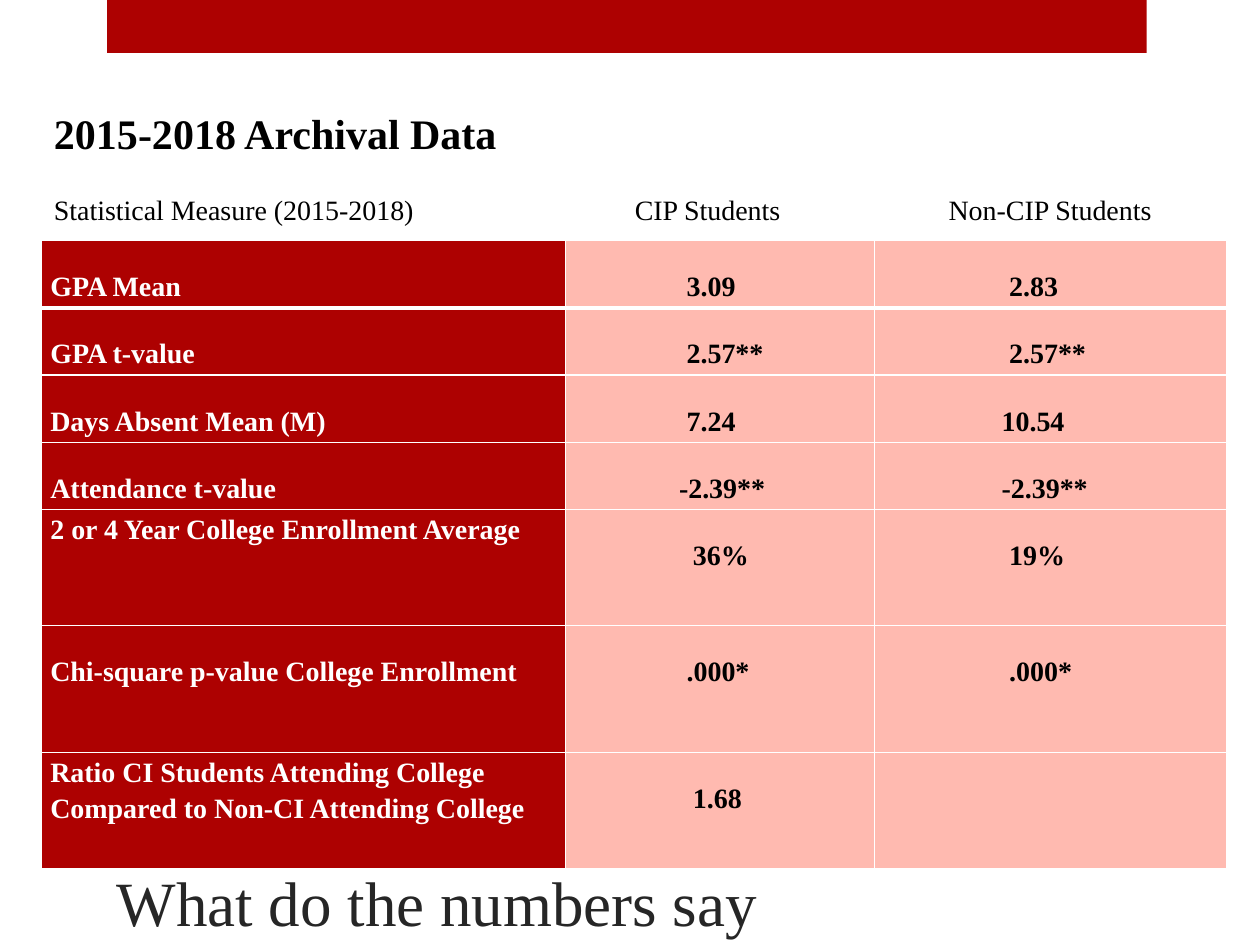
from lxml.etree import SubElement
from pptx import Presentation
from pptx.dml.color import RGBColor
from pptx.enum.shapes import MSO_SHAPE
from pptx.enum.text import MSO_ANCHOR
from pptx.oxml.ns import qn
from pptx.util import Inches, Pt

RED = RGBColor(0xAD, 0x01, 0x01)
PINK = RGBColor(0xFF, 0xBA, 0xB0)
WHITE = RGBColor(0xFF, 0xFF, 0xFF)
BLACK = RGBColor(0x00, 0x00, 0x00)
CHARCOAL = RGBColor(0x26, 0x26, 0x26)

COLUMN_WIDTHS = [4.16, 2.45, 2.8]
ROW_HEIGHTS = [0.52] * 4 + [0.92, 1.01, 0.92]
# Label, label line spacing, then a (value, indent) pair for each group
MEASURES = [
    ("GPA Mean", 2, ("3.09", 0.89), ("2.83", 1)),
    ("GPA t-value", 2, ("2.57**", 0.89), ("2.57**", 1)),
    ("Days Absent Mean (M)", 2, ("7.24", 0.89), ("10.54", 0.94)),
    ("Attendance t-value", 2, ("-2.39**", 0.83), ("-2.39**", 0.94)),
    ("2 or 4 Year College Enrollment Average", 1.15, ("36%", 0.94), ("19%", 1)),
    ("Chi-square p-value College Enrollment", 2, (".000*", 0.89), (".000*", 1)),
    ("Ratio CI Students Attending College Compared to Non-CI Attending College",
     1.15, ("1.68", 0.94), ("", 0)),
]


class SlideBuilder:
    font_name = "Times New Roman"

    def __init__(self, slide):
        self.slide = slide

    def style(self, paragraph, size, color, bold=False):
        font = paragraph.font
        font.name, font.size, font.bold = self.font_name, Pt(size), bold
        font.color.rgb = color

    def bar(self, left, top, width, height, color):
        shape = self.slide.shapes.add_shape(
            MSO_SHAPE.RECTANGLE, Inches(left), Inches(top), Inches(width), Inches(height))
        shape.shadow.inherit = False
        shape.fill.solid()
        shape.fill.fore_color.rgb = color
        shape.line.fill.background()

    def text(self, left, top, width, height, text, size, color=BLACK, bold=False,
             anchor=MSO_ANCHOR.MIDDLE, tab_stops=()):
        box = self.slide.shapes.add_textbox(
            Inches(left), Inches(top), Inches(width), Inches(height))
        frame = box.text_frame
        frame.word_wrap = True
        frame.vertical_anchor = anchor
        paragraph = frame.paragraphs[0]
        paragraph.text = text
        if tab_stops:
            tab_list = SubElement(paragraph._p.get_or_add_pPr(), qn("a:tabLst"))
            for position in tab_stops:
                SubElement(tab_list, qn("a:tab"), pos=str(Inches(position)), algn="l")
        self.style(paragraph, size, color, bold)

    def borders(self, cell, bottom_width):
        properties = cell._tc.get_or_add_tcPr()
        for side, width in (("L", 1), ("R", 1), ("T", 1), ("B", bottom_width)):
            line = SubElement(properties, qn(f"a:ln{side}"), w=str(Pt(width)))
            fill = SubElement(line, qn("a:solidFill"))
            SubElement(fill, qn("a:srgbClr"), val=str(WHITE))

    def cell(self, cell, text, fill, color, spacing=2, indent=0, bottom_width=1):
        self.borders(cell, bottom_width)
        cell.fill.solid()
        cell.fill.fore_color.rgb = fill
        cell.margin_left = cell.margin_right = Inches(0.07)
        cell.margin_top = cell.margin_bottom = 0
        paragraph = cell.text_frame.paragraphs[0]
        paragraph.text = text
        paragraph.line_spacing = spacing
        paragraph._p.get_or_add_pPr().set("marL", str(Inches(indent)))
        self.style(paragraph, 16, color, bold=True)

    def table(self, left, top, column_widths, row_heights, measures):
        table = self.slide.shapes.add_table(
            len(row_heights), len(column_widths), Inches(left), Inches(top),
            Inches(sum(column_widths)), Inches(sum(row_heights))).table
        table.horz_banding = False
        for column, width in zip(table.columns, column_widths):
            column.width = Inches(width)
        for index, (label, spacing, *values) in enumerate(measures):
            table.rows[index].height = Inches(row_heights[index])
            bottom_width = 3 if index == 0 else 1
            self.cell(table.cell(index, 0), label, RED, WHITE, spacing,
                      bottom_width=bottom_width)
            for column, (value, indent) in enumerate(values, start=1):
                self.cell(table.cell(index, column), value, PINK, BLACK,
                          indent=indent, bottom_width=bottom_width)


def main():
    presentation = Presentation()
    presentation.slide_width, presentation.slide_height = Inches(10), Inches(7.5)
    builder = SlideBuilder(presentation.slides.add_slide(presentation.slide_layouts[6]))

    # Top band
    builder.bar(0.85, 0, 8.25, 0.42, RED)

    # Slide title at the foot, and heading
    builder.text(0.83, 6.58, 7.42, 0.92, "What do the numbers say", 36, CHARCOAL,
                 anchor=MSO_ANCHOR.BOTTOM)
    builder.text(0.33, 0.75, 9.42, 0.6, "2015-2018 Archival Data", 24, bold=True)

    # Statistics table and its column captions
    builder.table(0.33, 1.91, COLUMN_WIDTHS, ROW_HEIGHTS, MEASURES)
    builder.text(0.33, 1.48, 9.42, 0.37,
                 "Statistical Measure (2015-2018)\tCIP Students\tNon-CIP Students", 16,
                 tab_stops=(4.61, 7.1))

    presentation.save("out.pptx")


if __name__ == "__main__":
    main()
